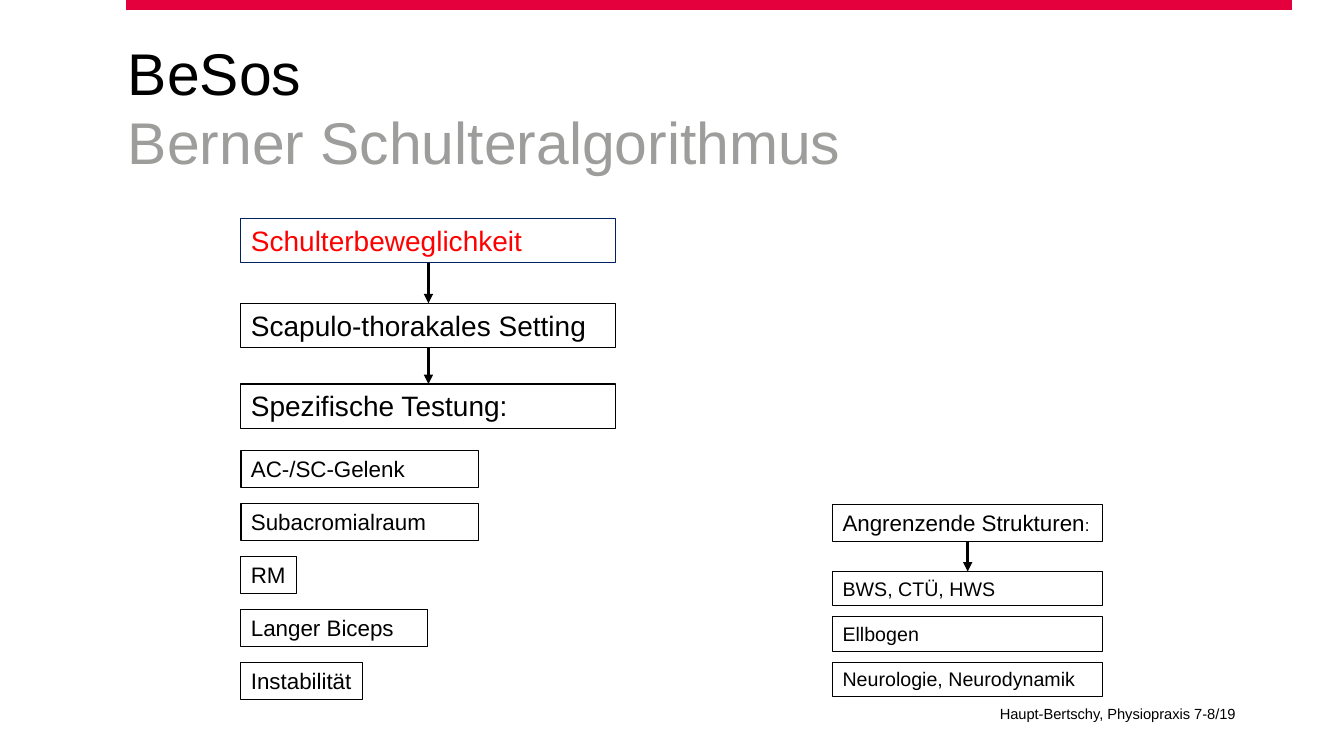
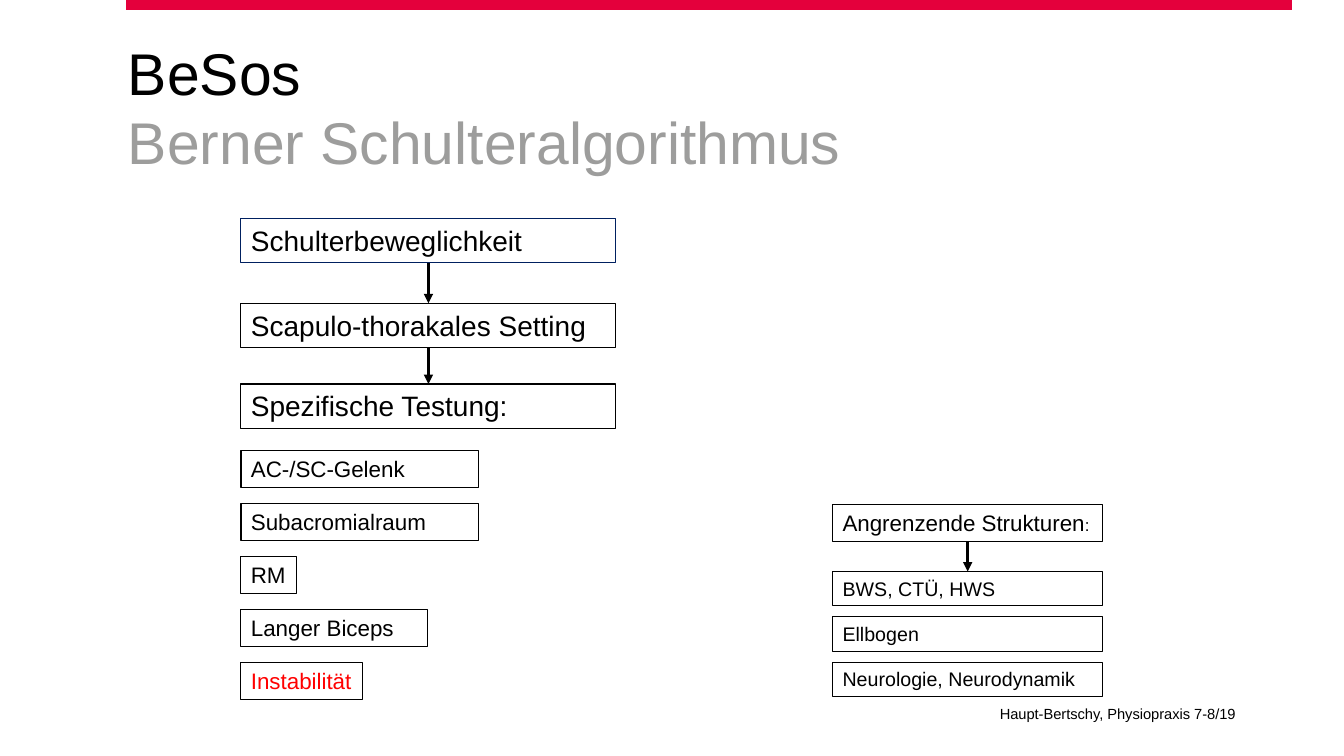
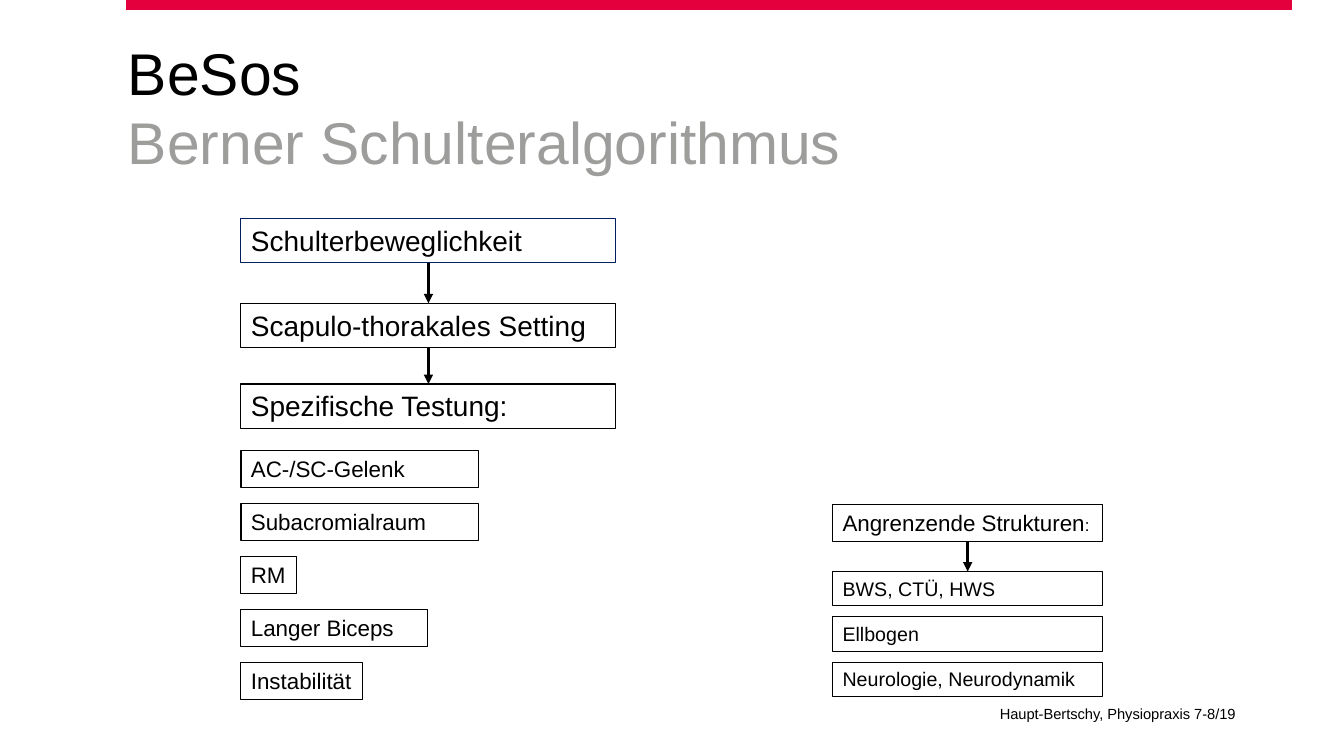
from lxml.etree import SubElement
from pptx import Presentation
from pptx.dml.color import RGBColor
from pptx.enum.shapes import MSO_CONNECTOR as CONNECTOR, MSO_SHAPE as SHAPE
from pptx.enum.text import MSO_ANCHOR as ANCHOR, MSO_AUTO_SIZE as AUTO_SIZE, PP_ALIGN as ALIGN
from pptx.oxml.ns import qn
from pptx.util import Inches, Pt

COLORS = {"band": "E4003C", "subtitle": "9D9D9C", "navy": "002060",
          "black": "000000", "highlight": "FF0000"}
FONT = "Arial"

deck = Presentation()
deck.slide_width, deck.slide_height = Inches(13.33), Inches(7.5)
COL, ROW = deck.slide_width / 100, deck.slide_height / 100  # one percent of the slide

# Left edges and widths in columns, tops and heights in rows
FLOW_LEFT, FLOW_WIDTH, FLOW_HEIGHT = 17.93, 27.9, 5.85
SIDE_LEFT, SIDE_WIDTH, SIDE_HEIGHT = 61.95, 20.1, 4.53
TEST_TOP, TEST_PITCH, TEST_HEIGHT = 59.6, 7, 4.95
REGION_TOP, REGION_PITCH = 75.6, 6

steps = [("Schulterbeweglichkeit", 28.93, "navy"),
         ("Scapulo-thorakales Setting", 40.13, "black"),
         ("Spezifische Testung:", 50.8, "black")]
tests = [("AC-/SC-Gelenk", 17.7), ("Subacromialraum", 17.7), ("RM", 4.13),
         ("Langer Biceps", 13.88), ("Instabilität", 9.08)]
regions = ["BWS, CTÜ, HWS", "Ellbogen", "Neurologie, Neurodynamik"]
highlights = ["Schulterbeweglichkeit", "Instabilität", None]


def add_text(slide, area, runs, color="black", border=None, **frame_format):
    """Add (text, size) runs at area (left, top, width, height), framed if border is given."""
    left, top, width, height = area
    box = slide.shapes.add_shape(SHAPE.RECTANGLE, round(left * COL), round(top * ROW),
                                 round(width * COL), round(height * ROW))
    box.shadow.inherit = False
    box.fill.background()
    if border:
        box.line.color.rgb = RGBColor.from_string(COLORS[border])
        box.line.width = Pt(0.75)
    else:
        box.line.fill.background()
    frame = box.text_frame
    defaults = {"word_wrap": True, "vertical_anchor": ANCHOR.TOP}
    for name, value in (defaults | frame_format).items():
        setattr(frame, name, value)
    paragraph = frame.paragraphs[0]
    paragraph.alignment = ALIGN.LEFT
    for text, size in runs:
        run = paragraph.add_run()
        run.text = text
        for name, value in {"name": FONT, "size": Pt(size)}.items():
            setattr(run.font, name, value)
        run.font.color.rgb = RGBColor.from_string(COLORS[color])
    return box


def add_line(slide, color, weight, start=(0, 0), end=(0, 0)):
    line = slide.shapes.add_connector(CONNECTOR.STRAIGHT, round(start[0] * COL), round(start[1] * ROW),
                                      round(end[0] * COL), round(end[1] * ROW))
    line.line.color.rgb = RGBColor.from_string(COLORS[color])
    line.line.width = Pt(weight)
    SubElement(line._element.spPr, qn("a:effectLst"))
    return line


for highlight in highlights:
    slide = deck.slides.add_slide(deck.slide_layouts[6])
    add_line(slide, "band", 7.5, (9.38, 0.67), (96.1, 0.67))
    subtitle = add_text(slide, (8.78, 12.67, 86.25, 9.47), [("Berner Schulteralgorithmus", 42)],
                        "subtitle", margin_top=Inches(0.1))
    subtitle.text_frame.paragraphs[0].space_after = Pt(6)
    title = add_text(slide, (8.78, 4.27, 86.25, 10.93), [("BeSos", 42)],
                     margin_top=Inches(0.1), vertical_anchor=ANCHOR.MIDDLE)
    title.text_frame.paragraphs[0].line_spacing = 0.9

    flow = [add_text(slide, (FLOW_LEFT, top, FLOW_WIDTH, FLOW_HEIGHT), [(step, 20)],
                     "highlight" if step == highlight else "black", border,
                     auto_size=AUTO_SIZE.SHAPE_TO_FIT_TEXT)
            for step, top, border in steps]

    for index, (test, width) in enumerate(tests):
        add_text(slide, (FLOW_LEFT, TEST_TOP + index * TEST_PITCH, width, TEST_HEIGHT), [(test, 16)],
                 "highlight" if test == highlight else "black", "black",
                 auto_size=AUTO_SIZE.SHAPE_TO_FIT_TEXT, word_wrap=test not in ("RM", "Instabilität"))

    adjacent = add_text(slide, (SIDE_LEFT, 66.67, SIDE_WIDTH, TEST_HEIGHT),
                        [("Angrenzende Strukturen", 16), (":", 12)], border="black",
                        auto_size=AUTO_SIZE.SHAPE_TO_FIT_TEXT)
    neighbours = [add_text(slide, (SIDE_LEFT, REGION_TOP + index * REGION_PITCH, SIDE_WIDTH, SIDE_HEIGHT),
                           [(region, 14)], border="black", auto_size=AUTO_SIZE.SHAPE_TO_FIT_TEXT)
                  for index, region in enumerate(regions)]

    for upper, lower in [*zip(flow, flow[1:]), (adjacent, neighbours[0])]:
        arrow = add_line(slide, "black", 2.25)
        arrow.begin_connect(upper, 2)
        arrow.end_connect(lower, 0)
        SubElement(arrow.line._get_or_add_ln(), qn("a:tailEnd"), type="triangle")

    add_text(slide, (73.65, 92.53, 21.38, 3.73), [("Haupt-Bertschy, Physiopraxis 7-8/19", 10.5)],
             auto_size=AUTO_SIZE.SHAPE_TO_FIT_TEXT)

deck.save("out.pptx")
